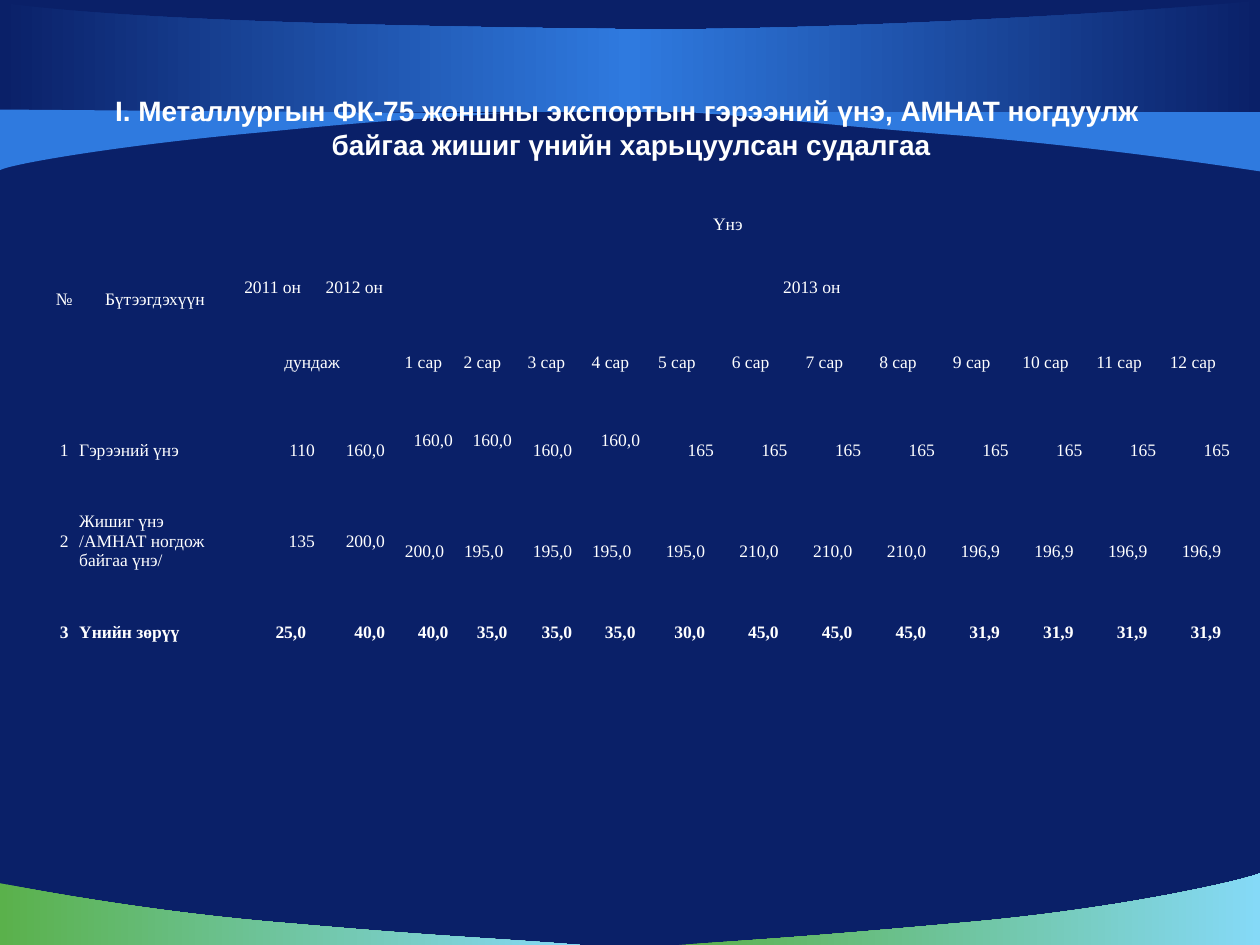
from copy import deepcopy
from dataclasses import dataclass

from lxml.etree import QName
from pptx import Presentation
from pptx.dml.color import RGBColor
from pptx.enum.text import MSO_ANCHOR, MSO_AUTO_SIZE, PP_ALIGN
from pptx.util import Pt


@dataclass(frozen=True)
class Theme:
    navy: str = "0A2068"
    blue: str = "2F7ADF"
    green: str = "5AB14B"
    sky: str = "85D9F7"
    white: str = "FFFFFF"
    title_font: str = "Arial"
    table_font: str = "Times New Roman"
    title_size: int = 16
    table_size: int = 10


THEME = Theme()
NO_TABLE_STYLE = "{2D5ABB26-0587-4C30-8999-92F81FD0307C}"
INSET = 5  # right inset of numbers with a decimal
NARROW_INSET = 2.6  # the same in the narrow month columns of the last row
NARROW_COLUMNS = (4, 5, 7)
SHIFT = 11.5  # one-sided inset that lifts or lowers a number

# Each outline is a start point and segments: two numbers a line, six a curve
FOOTER_COLORS = (THEME.green, THEME.sky)
HEADER_COLORS = (THEME.navy, THEME.blue, THEME.navy)
WAVES = [
    (FOOTER_COLORS, (331.2, 540), [
        (276.5, 535.7, 257.8, 535.7, 167, 527.8),
        (76.3, 520.6, 0.7, 504.7, 0, 504.7), (0, 540)]),
    (FOOTER_COLORS, (388.1, 540), [
        (442.1, 536.4, 465.1, 535, 553.7, 527),
        (642.2, 519.1, 712.8, 502.6, 720, 499), (720, 540)]),
    ((THEME.blue,), (391.7, 64), [
        (446.4, 67.7, 462.2, 70.6, 553, 77.8),
        (643.7, 85.7, 719.3, 97.9, 720, 97.9), (720, 63.4)]),
    (HEADER_COLORS, (0, 64), [
        (720, 64), (720, 0), (694.1, 4.3, 470.2, 18.7, 350.6, 16.6),
        (231.1, 15.1, 72.7, 12.2, 0, 1.4)]),
    ((THEME.blue,), (286.6, 64.8), [
        (238.3, 68.4, 229, 67.7, 149.8, 75.6),
        (69.8, 82.8, 6.5, 93.6, 0, 97.2), (0, 62.6)]),
]

COLUMN_WIDTHS = [17.2, 86.4, 48.2, 45.1, 33.8, 33.8, 39.4, 33.8] + [42.15] * 8
ROW_HEIGHTS = [36, 36, 50, 50.2, 54, 50.2]

# Header cells: row, column, text, rows spanned, columns spanned
HEADERS = [
    (0, 0, "№", 3, 1), (0, 1, "Бүтээгдэхүүн", 3, 1), (0, 2, "Үнэ ", 1, 14),
    (1, 2, "2011 он", 1, 1), (1, 3, "2012 он", 1, 1), (1, 4, "2013 он", 1, 12),
    (2, 2, "дундаж", 1, 2),
] + [(2, 3 + month, f"{month} сар", 1, 1) for month in range(1, 13)]

PRODUCTS = [
    ("Гэрээний үнэ", ["110"] + ["160,0"] * 5 + ["165"] * 8),
    ("Жишиг үнэ /АМНАТ ногдож байгаа үнэ/",
     ["135"] + ["200,0"] * 2 + ["195,0"] * 4 + ["210,0"] * 3 + ["196,9"] * 4),
    ("Үнийн зөрүү",
     ["25,0"] + ["40,0"] * 2 + ["35,0"] * 3 + ["30,0"] + ["45,0"] * 3 + ["31,9"] * 4),
]


def set_attributes(target, values):
    for name, value in values.items():
        setattr(target, name, value)


def format_text(paragraph, font_name, size, bold, alignment):
    paragraph.alignment = alignment
    set_attributes(paragraph.font, {"name": font_name, "size": Pt(size), "bold": bold})
    paragraph.font.color.rgb = RGBColor.from_string(THEME.white)


def fill_shape(shape, colors):
    if len(colors) == 1:
        shape.fill.solid()
        shape.fill.fore_color.rgb = RGBColor.from_string(colors[0])
        return
    shape.fill.gradient()
    shape.fill.gradient_angle = 0
    stop_list = shape.fill._fill._gradFill.gsLst
    while len(stop_list) < len(colors):
        stop_list.append(deepcopy(stop_list[-1]))
    for index, (stop, color) in enumerate(zip(shape.fill.gradient_stops, colors)):
        stop.position = index / (len(colors) - 1)
        stop.color.rgb = RGBColor.from_string(color)


def bend_lines(shape, segments):
    """Join each three lines that stand for a curve into one cubic curve."""
    lines = iter(list(shape.element.iter("{*}lnTo")))
    for segment in segments:
        first = next(lines)
        if len(segment) == 2:
            continue
        curve = first.makeelement(QName(first).text.replace("lnTo", "cubicBezTo"))
        first.addprevious(curve)
        for line in (first, next(lines), next(lines)):
            curve.append(line[0])
            line.getparent().remove(line)


def add_wave(slide, colors, start, segments):
    points = [(Pt(x), Pt(y)) for segment in segments
              for x, y in zip(segment[::2], segment[1::2])]
    builder = slide.shapes.build_freeform(Pt(start[0]), Pt(start[1]))
    builder.add_line_segments(points, close=True)
    shape = builder.convert_to_shape()
    bend_lines(shape, segments)
    shape.shadow.inherit = False
    shape.line.fill.background()
    fill_shape(shape, colors)


def add_title(slide, text):
    title = slide.shapes.title
    title.element.getparent().append(title.element)  # in front of the waves
    set_attributes(title, {"left": Pt(33.8), "top": Pt(50.4),
                           "width": Pt(653.8), "height": Pt(44.6)})
    set_attributes(title.text_frame, {
        "text": text, "word_wrap": True, "auto_size": MSO_AUTO_SIZE.NONE,
        "vertical_anchor": MSO_ANCHOR.MIDDLE})
    format_text(title.text_frame.paragraphs[0], THEME.title_font,
                THEME.title_size, True, PP_ALIGN.CENTER)


def fill_cell(cell, text, alignment=PP_ALIGN.CENTER, bold=False, **margins):
    cell.text = text
    format_text(cell.text_frame.paragraphs[0], THEME.table_font,
                THEME.table_size, bold, alignment)
    for side in ("left", "right", "top", "bottom"):
        setattr(cell, f"margin_{side}", Pt(margins.get(side, 0)))


def number_margins(product, column):
    """Insets that place a number within its cell."""
    narrow = column in NARROW_COLUMNS
    if product == 0:
        if narrow:
            return {"bottom": SHIFT}
        return {"right": INSET} if column in (3, 6) else {}
    if product == 1:
        margins = {"right": INSET} if column > 2 else {}
        return margins | ({"top": SHIFT} if column > 3 else {})
    return {"right": NARROW_INSET if narrow else INSET}


def add_price_table(slide):
    frame = slide.shapes.add_table(
        len(ROW_HEIGHTS), len(COLUMN_WIDTHS), Pt(28.1), Pt(110.2),
        Pt(sum(COLUMN_WIDTHS)), Pt(sum(ROW_HEIGHTS)))
    table = frame.table
    table._tbl.tblPr.find("{*}tableStyleId").text = NO_TABLE_STYLE
    set_attributes(table, {"first_row": False, "horz_banding": False})
    for column, width in zip(table.columns, COLUMN_WIDTHS):
        column.width = Pt(width)
    for row, height in zip(table.rows, ROW_HEIGHTS):
        row.height = Pt(height)
    for cell in table.iter_cells():
        cell.fill.background()
        cell.vertical_anchor = MSO_ANCHOR.MIDDLE

    # Header
    for row, column, text, row_span, column_span in HEADERS:
        cell = table.cell(row, column)
        if row_span * column_span > 1:
            cell.merge(table.cell(row + row_span - 1, column + column_span - 1))
        fill_cell(cell, text)

    # Prices and their difference
    for product, (label, prices) in enumerate(PRODUCTS):
        row, bold = product + 3, product == 2
        fill_cell(table.cell(row, 0), str(product + 1), bold=bold)
        fill_cell(table.cell(row, 1), label, PP_ALIGN.LEFT, bold)
        for column, price in enumerate(prices, start=2):
            fill_cell(table.cell(row, column), price, PP_ALIGN.RIGHT, bold,
                      **number_margins(product, column))


def main():
    presentation = Presentation()
    set_attributes(presentation, {"slide_width": Pt(720), "slide_height": Pt(540)})
    slide = presentation.slides.add_slide(presentation.slide_layouts[5])
    slide.background.fill.solid()
    slide.background.fill.fore_color.rgb = RGBColor.from_string(THEME.navy)

    # Decorative waves, then the content
    for colors, start, segments in WAVES:
        add_wave(slide, colors, start, segments)
    add_title(slide, "I. Металлургын ФК-75 жоншны экспортын гэрээний үнэ, "
                     "АМНАТ ногдуулж \vбайгаа жишиг үнийн харьцуулсан судалгаа")
    add_price_table(slide)
    presentation.save("out.pptx")


if __name__ == "__main__":
    main()
